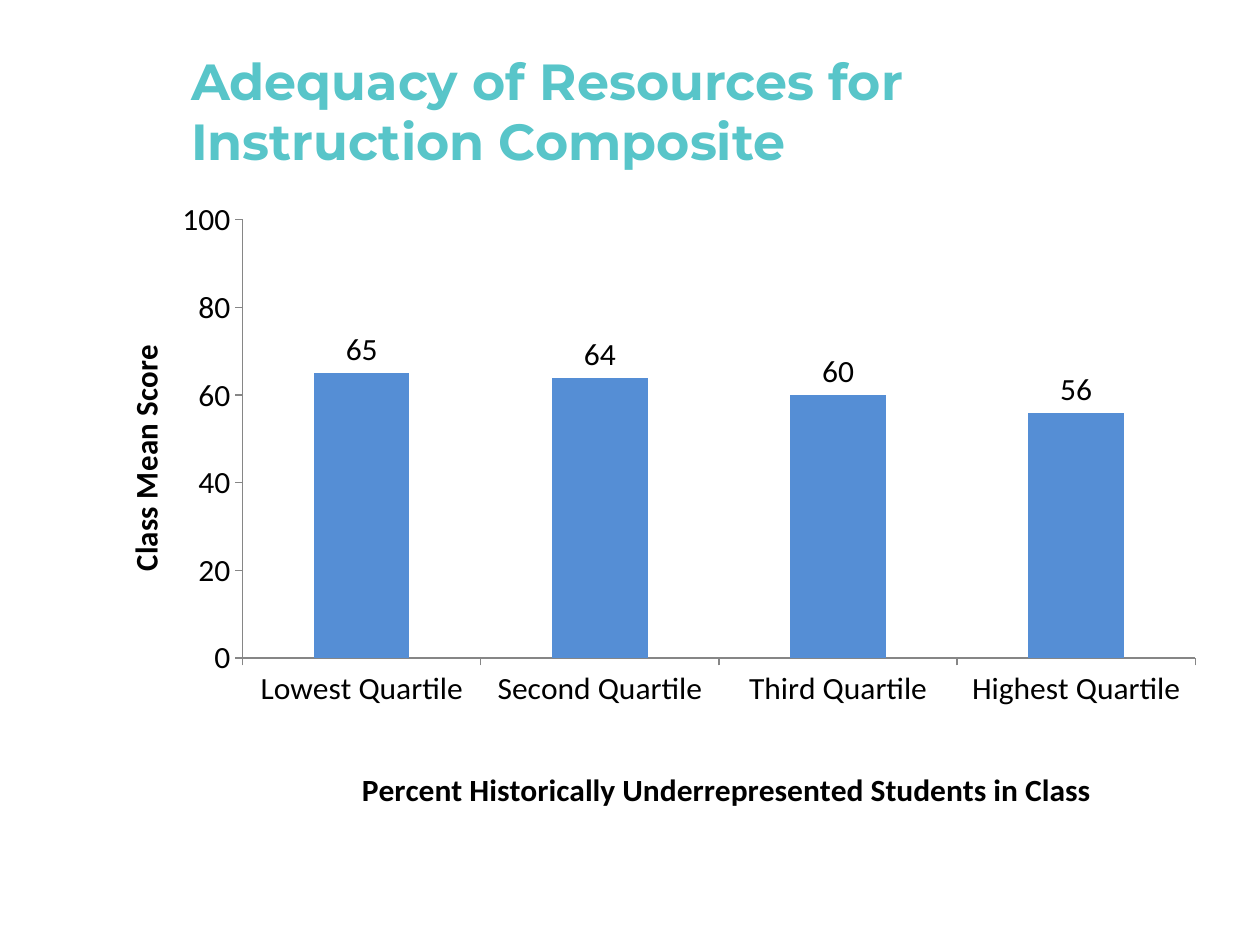
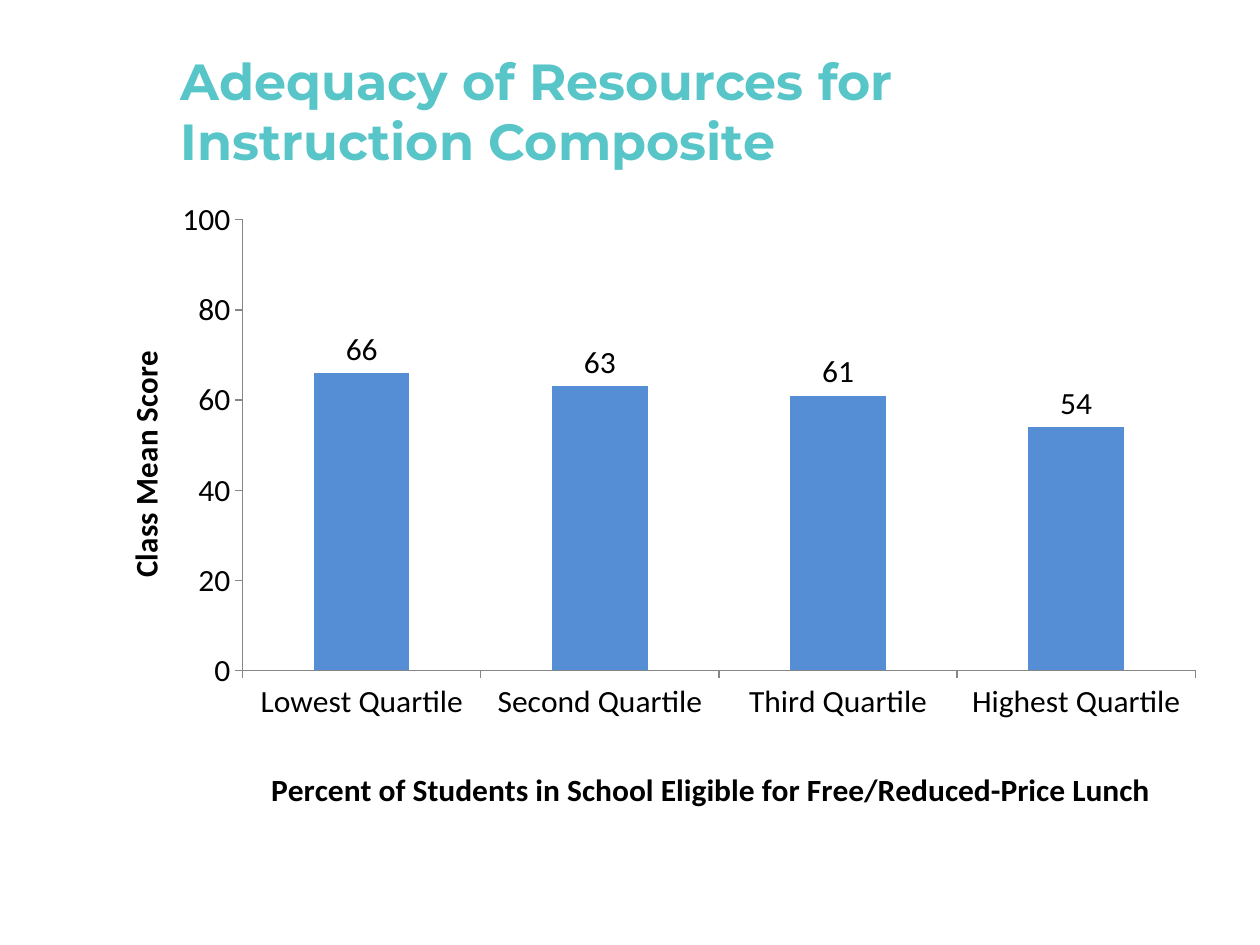
"""Build two slides of column charts on the adequacy of resources for instruction."""
from dataclasses import dataclass

from lxml.etree import SubElement
from pptx import Presentation
from pptx.chart.data import CategoryChartData as ChartData
from pptx.dml.color import RGBColor
from pptx.enum.chart import XL_CHART_TYPE as ChartType
from pptx.enum.chart import XL_LABEL_POSITION as LabelPosition
from pptx.enum.chart import XL_TICK_MARK as TickMark
from pptx.enum.text import MSO_ANCHOR as Anchor
from pptx.enum.text import MSO_AUTO_SIZE as AutoSize
from pptx.enum.text import PP_ALIGN as Align
from pptx.oxml.ns import qn
from pptx.util import Emu, Pt

EMU_PER_PX = 9525
SLIDE_WIDTH, SLIDE_HEIGHT = 960, 720
TITLE_TOP, TITLE_RIGHT, TITLE_HEIGHT = 24, 912, 120
CHART_BOX = (64, 144, 864, 480)
TITLE_ONLY_LAYOUT = 5

TEAL, BLUE, BLACK, GREY = "58C5C9", "558ED5", "000000", "868686"
TITLE_FONT, CHART_FONT = "Montserrat", "Calibri"
TITLE_SIZE, CHART_SIZE = 29, 18

TITLE = "Adequacy of Resources for Instruction Composite"
SCORE_TITLE = "Class Mean Score"
QUARTILES = ("Lowest Quartile", "Second Quartile", "Third Quartile", "Highest Quartile")


@dataclass(frozen=True)
class ScoreSlide:
    title_left: int
    quartile_title: str
    scores: tuple[int, ...]
    plot_height: float
    quartile_title_at: tuple[float, float]
    score_title_at: tuple[float, float]


SCORE_SLIDES = (
    ScoreSlide(136, "Percent Historically Underrepresented Students in Class",
               (65, 64, 60, 56), 0.71, (0.24, 0.93), (0.03, 0.25)),
    ScoreSlide(128, "Percent of Students in School Eligible for Free/Reduced-Price Lunch",
               (66, 63, 61, 54), 0.73, (0.16, 0.93), (0.03, 0.26)),
)


def px(length: int) -> Emu:
    return Emu(length * EMU_PER_PX)


def color(value: str) -> RGBColor:
    return RGBColor.from_string(value)


def style_font(font, name: str, size: int, value: str, bold: bool) -> None:
    font.name = name
    font.size = Pt(size)
    font.bold = bold
    font.color.rgb = color(value)


def place(parent, index: int, inner: bool = False, **fractions: float) -> None:
    """Give a chart part a manual layout in fractions of the chart area."""
    layout = parent.find(qn("c:layout"))
    if layout is None:
        layout = SubElement(parent, qn("c:layout"))
        parent.insert(index, layout)
    manual = SubElement(layout, qn("c:manualLayout"))
    if inner:
        SubElement(manual, qn("c:layoutTarget")).set("val", "inner")
    for mode in ("xMode", "yMode"):
        SubElement(manual, qn(f"c:{mode}")).set("val", "edge")
    for key, fraction in fractions.items():
        SubElement(manual, qn(f"c:{key}")).set("val", str(fraction))


def style_axis(axis, title: str, position: tuple[float, float], rotation: int) -> None:
    axis.has_major_gridlines = False
    axis.major_tick_mark = TickMark.OUTSIDE
    axis.minor_tick_mark = TickMark.NONE
    axis.format.line.color.rgb = color(GREY)
    axis.format.line.width = Pt(0.75)
    style_font(axis.tick_labels.font, CHART_FONT, CHART_SIZE, BLACK, False)
    axis_title = axis.axis_title
    run = axis_title.text_frame.paragraphs[0].add_run()
    run.text = title
    style_font(run.font, CHART_FONT, CHART_SIZE, BLACK, True)
    body = next(axis_title.element.iter(qn("a:bodyPr")))
    body.set("rot", str(rotation * 60000))
    body.set("vert", "horz")
    left, top = position
    place(axis_title.element, 1, x=left, y=top)


def add_title(slide, left: int) -> None:
    shape = slide.shapes.title
    shape.left, shape.top = px(left), px(TITLE_TOP)
    shape.width, shape.height = px(TITLE_RIGHT - left), px(TITLE_HEIGHT)
    frame = shape.text_frame
    frame.word_wrap = True
    frame.auto_size = AutoSize.NONE
    frame.vertical_anchor = Anchor.MIDDLE
    paragraph = frame.paragraphs[0]
    paragraph.alignment = Align.LEFT
    run = paragraph.add_run()
    run.text = TITLE
    style_font(run.font, TITLE_FONT, TITLE_SIZE, TEAL, True)


def add_score_chart(slide, content: ScoreSlide) -> None:
    data = ChartData(number_format="0")
    data.categories = QUARTILES
    data.add_series("Series 1", content.scores)
    box = [px(length) for length in CHART_BOX]
    chart = slide.shapes.add_chart(ChartType.COLUMN_CLUSTERED, *box, data).chart
    chart.has_title = False
    chart.has_legend = False
    style_font(chart.font, CHART_FONT, CHART_SIZE, BLACK, False)

    plot = chart.plots[0]
    plot.vary_by_categories = False
    plot.gap_width = 150
    fill = plot.series[0].format.fill
    fill.solid()
    fill.fore_color.rgb = color(BLUE)
    plot.has_data_labels = True
    labels = plot.data_labels
    labels.show_value = True
    labels.position = LabelPosition.OUTSIDE_END
    style_font(labels.font, CHART_FONT, CHART_SIZE, BLACK, False)

    score_axis = chart.value_axis
    score_axis.minimum_scale = 0
    score_axis.maximum_scale = 100
    score_axis.major_unit = 20
    style_axis(score_axis, SCORE_TITLE, content.score_title_at, -90)
    style_axis(chart.category_axis, content.quartile_title, content.quartile_title_at, 0)
    plot_area = next(chart.element.iter(qn("c:plotArea")))
    place(plot_area, 0, inner=True, x=0.14, y=0.05, w=0.84, h=content.plot_height)


def main() -> None:
    presentation = Presentation()
    presentation.slide_width = px(SLIDE_WIDTH)
    presentation.slide_height = px(SLIDE_HEIGHT)
    for content in SCORE_SLIDES:
        slide = presentation.slides.add_slide(presentation.slide_layouts[TITLE_ONLY_LAYOUT])
        add_score_chart(slide, content)
        add_title(slide, content.title_left)
    presentation.save("out.pptx")


if __name__ == "__main__":
    main()
